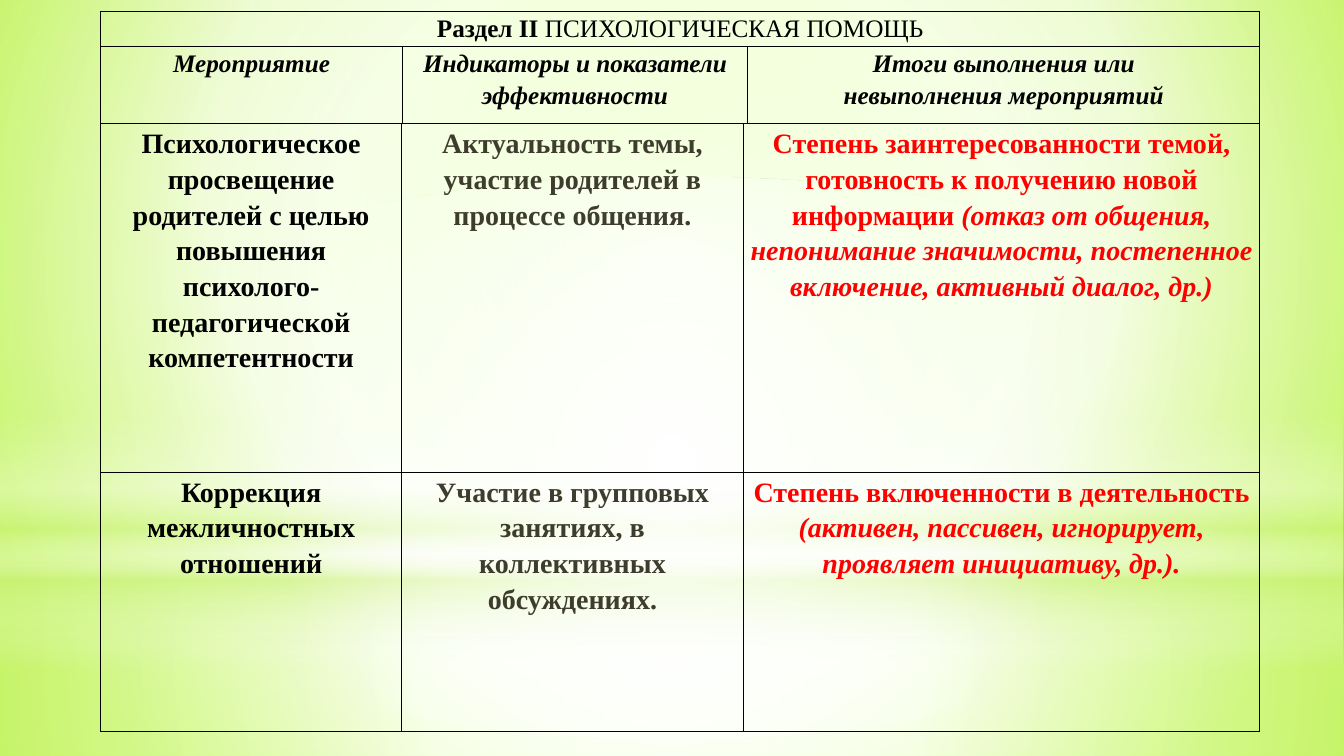
"""Build a slide with a two-part table on psychological help."""
from dataclasses import dataclass

import lxml.etree
import pptx
import pptx.dml.color
import pptx.enum.shapes
import pptx.enum.text
import pptx.oxml.ns
import pptx.util

FONT = "Times New Roman"
BLACK, OLIVE, RED = "000000", "3E3D2D", "FF0000"
WHITE, LIME = "FFFFFF", "CAF278"


@dataclass
class Gradient:
    stops: list[tuple[int, str, int]]
    center: tuple[int, int, int, int] | None = None


@dataclass
class Glow:
    kind: pptx.enum.shapes.MSO_SHAPE
    top: float
    height: float
    gradient: Gradient


@dataclass
class Span:
    text: str
    color: str = BLACK
    bold: bool = True
    italic: bool = False


@dataclass
class Grid:
    top: float
    size: int
    columns: list[float]
    heights: list[float]
    rows: list[list[list[list[Span]]]]


RECTANGLE = pptx.enum.shapes.MSO_SHAPE.RECTANGLE
OVAL = pptx.enum.shapes.MSO_SHAPE.OVAL
MIDDLE = (50, 50, 50, 50)
BACKGROUND = Gradient([(0, "CAFF60", 100), (60, "F7FFE7", 100), (100, "B7FF29", 100)], (20, 10, 20, 60))
GLOWS = [
    Glow(RECTANGLE, 402, 138, Gradient([(0, WHITE, 91), (37, WHITE, 76), (100, LIME, 79)], MIDDLE)),
    Glow(RECTANGLE, 0, 402, Gradient([(0, WHITE, 89), (48, WHITE, 62), (100, LIME, 79)], MIDDLE)),
    Glow(RECTANGLE, 296.5, 180, Gradient([(0, WHITE, 0), (29, WHITE, 30), (45, LIME, 40),
                                          (55, WHITE, 26), (65, LIME, 60), (100, WHITE, 0)])),
    Glow(OVAL, 126, 402, Gradient([(0, WHITE, 100), (56, WHITE, 0)], MIDDLE)),
]

ACTIVITIES = Grid(88.5, 20, [214.8, 244.3, 368.8], [249, 185.2], [
    [
        [[Span("Психологическое просвещение родителей с целью повышения "
               "психолого-педагогической компетентности")]],
        [[Span("Актуальность темы, участие родителей в процессе общения.", OLIVE)]],
        [[Span("Степень заинтересованности темой, готовность к получению новой информации ", RED),
          Span("(отказ от общения, непонимание значимости, постепенное включение, "
               "активный диалог, др.)", RED, italic=True)]],
    ],
    [
        [[Span("Коррекция межличностных отношений")]],
        [[Span("Участие в групповых занятиях, в коллективных обсуждениях.", OLIVE)]],
        [[Span("Степень включенности в деятельность ", RED),
          Span("(активен, пассивен, игнорирует, проявляет инициативу, др.).", RED, italic=True)]],
    ],
])
HEADINGS = Grid(8, 18, [215.5, 246.5, 365.9], [25, 55.5], [
    [[[Span("Раздел II "), Span("ПСИХОЛОГИЧЕСКАЯ ПОМОЩЬ", bold=False)]]],
    [
        [[Span("Мероприятие", italic=True)]],
        [[Span("Индикаторы и показатели эффективности", italic=True)]],
        [[Span("Итоги выполнения или", italic=True)],
         [Span("невыполнения мероприятий", italic=True)]],
    ],
])


def rgb(value: str) -> pptx.dml.color.RGBColor:
    return pptx.dml.color.RGBColor.from_string(value)


def add_node(parent, tag: str, **attributes):
    return lxml.etree.SubElement(parent, pptx.oxml.ns.qn(tag),
                                 {name: str(value) for name, value in attributes.items()})


def paint_gradient(fill, owner, gradient: Gradient) -> None:
    fill.gradient()
    node = owner.find(".//" + pptx.oxml.ns.qn("a:gradFill"))
    for child in list(node):
        node.remove(child)
    stops = add_node(node, "a:gsLst")
    for position, color, opacity in gradient.stops:
        stop = add_node(stops, "a:gs", pos=position * 1000)
        tint = add_node(stop, "a:srgbClr", val=color)
        if opacity < 100:
            add_node(tint, "a:alpha", val=opacity * 1000)
    if gradient.center:
        circle = add_node(node, "a:path", path="circle")
        sides = {side: share * 1000 for side, share in zip("ltrb", gradient.center)}
        add_node(circle, "a:fillToRect", **sides)
    else:
        add_node(node, "a:lin", ang=90 * 60000, scaled=0)


def add_glow(page, glow: Glow, width: int) -> None:
    shape = page.shapes.add_shape(glow.kind, 0, pptx.util.Pt(glow.top), width, pptx.util.Pt(glow.height))
    shape.shadow.inherit = False
    shape.line.fill.background()
    paint_gradient(shape.fill, shape.element, glow.gradient)


def style_cell(cell) -> None:
    cell.margin_left = cell.margin_right = pptx.util.Pt(5)
    cell.margin_top = cell.margin_bottom = 0
    cell.fill.background()
    properties = cell._tc.get_or_add_tcPr()
    for index, side in enumerate("LRTB"):
        border = add_node(properties, f"a:ln{side}", w=pptx.util.Pt(1))
        add_node(add_node(border, "a:solidFill"), "a:srgbClr", val=BLACK)
        properties.insert(index, border)


def write_cell(cell, paragraphs: list[list[Span]], size: int) -> None:
    frame = cell.text_frame
    for index, spans in enumerate(paragraphs):
        para = frame.add_paragraph() if index else frame.paragraphs[0]
        para.alignment = pptx.enum.text.PP_ALIGN.CENTER
        para.line_spacing = 1.15
        for span in spans:
            run = para.add_run()
            run.text = span.text
            run.font.name = FONT
            run.font.size = pptx.util.Pt(size)
            run.font.bold = span.bold
            run.font.italic = span.italic
            run.font.color.rgb = rgb(span.color)


def add_grid(page, grid: Grid) -> None:
    box = page.shapes.add_table(len(grid.rows), len(grid.columns), pptx.util.Pt(72), pptx.util.Pt(grid.top),
                                pptx.util.Pt(sum(grid.columns)), pptx.util.Pt(sum(grid.heights)))
    table = box.table
    table.first_row = table.horz_banding = False
    for column, width in zip(table.columns, grid.columns):
        column.width = pptx.util.Pt(width)
    for row, height in zip(table.rows, grid.heights):
        row.height = pptx.util.Pt(height)
    for cell in table.iter_cells():
        style_cell(cell)
    for row_index, texts in enumerate(grid.rows):
        if len(texts) == 1:
            table.cell(row_index, 0).merge(table.cell(row_index, len(grid.columns) - 1))
        for column_index, paragraphs in enumerate(texts):
            write_cell(table.cell(row_index, column_index), paragraphs, grid.size)


def main() -> None:
    deck = pptx.Presentation()
    deck.slide_width, deck.slide_height = pptx.util.Pt(960), pptx.util.Pt(540)
    page = deck.slides.add_slide(deck.slide_layouts[6])
    paint_gradient(page.background.fill, page.element, BACKGROUND)
    for glow in GLOWS:
        add_glow(page, glow, deck.slide_width)
    for grid in (ACTIVITIES, HEADINGS):
        add_grid(page, grid)
    deck.save("out.pptx")


if __name__ == "__main__":
    main()
